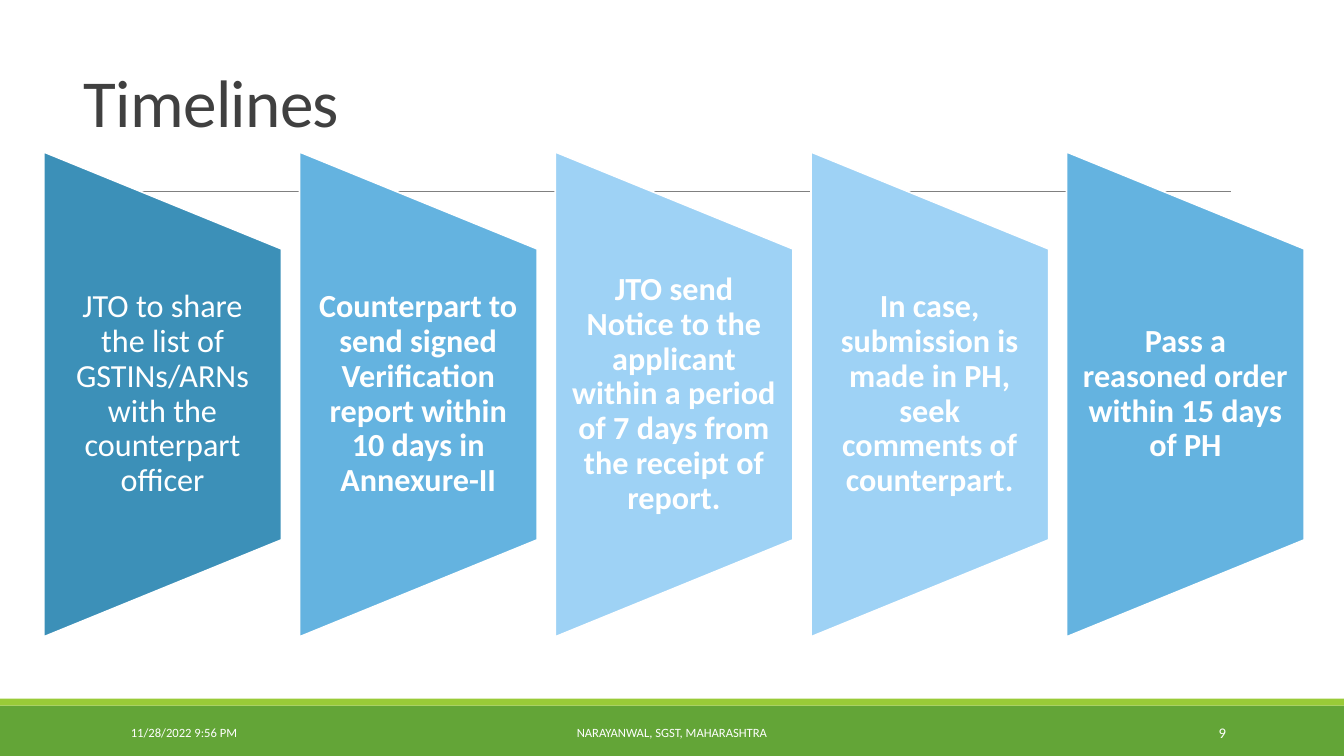
from lxml import etree
from pptx import Presentation
from pptx import util as u
from pptx.dml.color import RGBColor
from pptx.enum import shapes, text
from pptx.oxml.ns import qn

WIDE, HIGH = 960, 540
LEFT, STEP = 31.3, 182.65
STEP_W, STEP_H, MID = 169.8, 346.4, 281.7
STEPS = [
    ("JTO to share the list of GSTINs/ARNs with the counterpart officer", "3C90B8", False),
    ("Counterpart to send signed Verification report within 10 days in Annexure-II", "64B3E0", True),
    ("JTO send Notice to the applicant within a period of 7 days from the receipt of report.", "9ED2F5", True),
    ("In case, submission is made in PH, seek comments of counterpart.", "9ED2F5", True),
    ("Pass a reasoned order within 15 days of PH", "64B3E0", True),
]
FOOTER = [
    ("11/28/2022 9:56 PM", 86.4, 194.4, 9, text.PP_ALIGN.LEFT),
    ("NARAYANWAL, SGST, MAHARASHTRA", 290.2, 379.4, 9, text.PP_ALIGN.CENTER),
    ("9", 779.8, 103, 10.5, text.PP_ALIGN.RIGHT),
]


def paint(code):
    return RGBColor.from_string(code)


class Deck:
    font = "Calibri"
    white = "FFFFFF"

    def __init__(self):
        self.prs = Presentation()
        self.prs.slide_width, self.prs.slide_height = u.Pt(WIDE), u.Pt(HIGH)
        self.slide = self.prs.slides.add_slide(self.prs.slide_layouts[5])

    def style(self, frame, words, size, color, align, bold=False, gap=1.0):
        frame.text = words
        frame.word_wrap = True
        frame.auto_size = text.MSO_AUTO_SIZE.NONE
        para = frame.paragraphs[0]
        para.alignment, para.line_spacing = align, gap
        run = para.runs[0]
        run.font.name, run.font.size, run.font.bold = self.font, u.Pt(size), bold
        run.font.color.rgb = paint(color)
        return run

    def title(self, words, x, y, w, h):
        box = self.slide.shapes.title
        box.left, box.top, box.width, box.height = map(u.Pt, (x, y, w, h))
        box.text_frame.vertical_anchor = text.MSO_ANCHOR.BOTTOM
        run = self.style(box.text_frame, words, 48, "404040", text.PP_ALIGN.LEFT, gap=0.85)
        run._r.get_or_add_rPr().set("spc", "-50")

    def shape(self, kind, x, y, w, h, fill, edge=None):
        item = self.slide.shapes.add_shape(kind, *map(u.Pt, (x, y, w, h)))
        item.shadow.inherit = False
        item.fill.solid()
        item.fill.fore_color.rgb = paint(fill)
        if edge:
            item.line.color.rgb = paint(edge)
            item.line.width = u.Pt(1.25)
        else:
            item.line.fill.background()
        return item

    def label(self, words, x, y, w, h, size, align, bold=False, gap=1.0, inset=(7.2, 3.6)):
        frame = self.slide.shapes.add_textbox(*map(u.Pt, (x, y, w, h))).text_frame
        frame.margin_left = frame.margin_right = u.Pt(inset[0])
        frame.margin_top = frame.margin_bottom = u.Pt(inset[1])
        frame.vertical_anchor = text.MSO_ANCHOR.MIDDLE
        self.style(frame, words, size, self.white, align, bold, gap)

    def rule(self, x, y, end):
        line = self.slide.shapes.add_connector(
            shapes.MSO_CONNECTOR.STRAIGHT, *map(u.Pt, (x, y, end, y)))
        line.line.color.rgb = paint("808080")
        line.line.width = u.Pt(0.5)
        etree.SubElement(line._element.spPr, qn("a:effectLst"))

    def step(self, x, words, fill, bold):
        item = self.shape(shapes.MSO_SHAPE.FLOWCHART_MANUAL_OPERATION,
                          x + (STEP_W - STEP_H) / 2, MID - STEP_W / 2,
                          STEP_H, STEP_W, fill, self.white)
        item.rotation = 270
        tall = STEP_H * 0.6
        self.label(words, x, MID - tall / 2, STEP_W, tall, 23,
                   text.PP_ALIGN.CENTER, bold, 0.9, (11.5, 0))


def main():
    deck = Deck()
    deck.shape(shapes.MSO_SHAPE.RECTANGLE, 0, 504, WIDE, 36, "63A537")
    deck.shape(shapes.MSO_SHAPE.RECTANGLE, 0, 499, WIDE, 5, "99CB38")
    deck.rule(94.3, 136.8, 879)
    deck.title("Timelines", 52.6, 16.6, 847.4, 87.8)
    for i, (words, fill, bold) in enumerate(STEPS):
        deck.step(LEFT + i * STEP, words, fill, bold)
    for words, x, w, size, align in FOOTER:
        deck.label(words, x, 508.6, w, 28.8, size, align)
    deck.prs.save("out.pptx")


if __name__ == "__main__":
    main()
